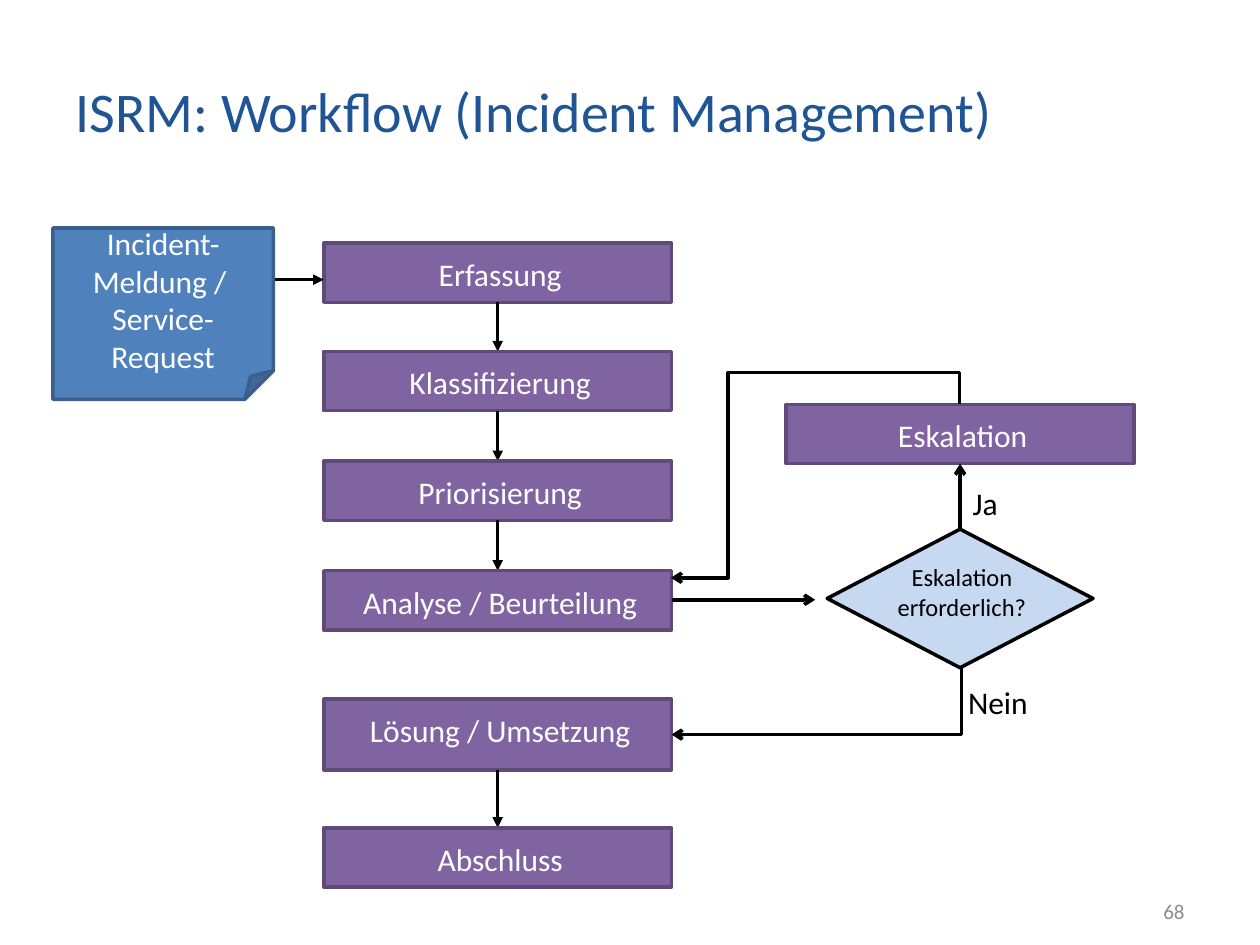
from lxml import etree
from pptx import Presentation
from pptx.dml.color import RGBColor
from pptx.enum.shapes import MSO_CONNECTOR, MSO_SHAPE
from pptx.enum.text import MSO_ANCHOR, PP_ALIGN
from pptx.oxml.ns import qn
from pptx.util import Inches, Pt

STRAIGHT, ELBOW = MSO_CONNECTOR.STRAIGHT, MSO_CONNECTOR.ELBOW
RECTANGLE, DIAMOND = MSO_SHAPE.RECTANGLE, MSO_SHAPE.DIAMOND
FOLDED_CORNER = MSO_SHAPE.FOLDED_CORNER
TOP, MIDDLE = MSO_ANCHOR.TOP, MSO_ANCHOR.MIDDLE
LEFT, CENTER, RIGHT = PP_ALIGN.LEFT, PP_ALIGN.CENTER, PP_ALIGN.RIGHT

WHITE = RGBColor(0xFF, 0xFF, 0xFF)
BLACK = RGBColor(0x00, 0x00, 0x00)
TITLE_BLUE = RGBColor(0x20, 0x55, 0x95)
NOTE_BLUE = RGBColor(0x4F, 0x81, 0xBD)
NOTE_EDGE = RGBColor(0x3A, 0x5F, 0x8C)
PURPLE = RGBColor(0x80, 0x64, 0xA2)
PURPLE_EDGE = RGBColor(0x5F, 0x4A, 0x78)
PALE_BLUE = RGBColor(0xC6, 0xD9, 0xF1)
GREY = RGBColor(0x8C, 0x8C, 0x8C)

FONT = "Calibri"
COLUMNS, ROWS = 100, 75  # square grid over the slide
CELL = Inches(10) // COLUMNS

# Main flow, in grid units
STEP_LEFT, STEP_WIDTH, STEP_HEIGHT = 25.7, 27.6, 4.7
STEP_RIGHT = STEP_LEFT + STEP_WIDTH
STEP_MIDDLE = STEP_LEFT + STEP_WIDTH / 2
STEPS = [  # label, top, height, arrow to the next step
    ("Erfassung", 19.3, STEP_HEIGHT, True),
    ("Klassifizierung", 27.9, STEP_HEIGHT, True),
    ("Priorisierung", 36.6, STEP_HEIGHT, True),
    ("Analyse / Beurteilung", 45.3, STEP_HEIGHT, False),
    ("Lösung / Umsetzung", 55.5, 5.6, True),
    ("Abschluss", 65.7, STEP_HEIGHT, False),
]

# Escalation branch
ESCALATION_LEFT, ESCALATION_TOP = 62.4, 32.1
BRANCH_MIDDLE = ESCALATION_LEFT + STEP_WIDTH / 2
DECISION_TOP, DECISION_WIDTH, DECISION_HEIGHT = 42, 21.1, 11


def grid(*units):
    return [round(unit * CELL) for unit in units]


def write(shape, text, size, color, align=CENTER, anchor=MIDDLE,
          insets=(0, 0, 0, 0), wrap=True):
    """Set the text; insets are left, top, right, bottom in grid units."""
    frame = shape.text_frame
    frame.text = text
    frame.word_wrap = wrap
    frame.vertical_anchor = anchor
    (frame.margin_left, frame.margin_top,
     frame.margin_right, frame.margin_bottom) = grid(*insets)
    for paragraph in frame.paragraphs:
        paragraph.alignment = align
        for run in paragraph.runs:
            run.font.name = FONT
            run.font.size = Pt(size)
            run.font.color.rgb = color


def add_label(slide, box, text, size, color, **options):
    write(slide.shapes.add_textbox(*grid(*box)), text, size, color, **options)


def add_node(slide, kind, box, fill, edge):
    shape = slide.shapes.add_shape(kind, *grid(*box))
    shape.shadow.inherit = False
    shape.fill.solid()
    shape.fill.fore_color.rgb = fill
    shape.line.color.rgb = edge
    shape.line.width = Pt(2)
    return shape


def add_step(slide, text, left, top, height=STEP_HEIGHT):
    box = (left, top, STEP_WIDTH, height)
    shape = add_node(slide, RECTANGLE, box, PURPLE, PURPLE_EDGE)
    write(shape, text, 18, WHITE, anchor=TOP, insets=(0.4, 0.95, 0, 0))


def add_arrow(slide, start, end, head="triangle", kind=STRAIGHT):
    connector = slide.shapes.add_connector(kind, *grid(*start, *end))
    connector.line.color.rgb = BLACK
    connector.line.width = Pt(2)
    properties = connector._element.spPr
    etree.SubElement(properties.find(qn("a:ln")), qn("a:tailEnd"), type=head)
    etree.SubElement(properties, qn("a:effectLst"))
    return connector


def bend(connector, preset, adjustments, quarter_turns=0):
    """Choose the elbow preset, its bends (1/1000 %) and its rotation."""
    properties = connector._element.spPr
    properties.find(qn("a:xfrm")).set("rot", str(quarter_turns * 5400000))
    geometry = properties.find(qn("a:prstGeom"))
    geometry.set("prst", preset)
    guides = geometry.find(qn("a:avLst"))
    if guides is None:
        guides = etree.SubElement(geometry, qn("a:avLst"))
    for number, value in enumerate(adjustments, 1):
        etree.SubElement(guides, qn("a:gd"), name=f"adj{number}",
                         fmla=f"val {value}")


def add_main_flow(slide):
    for index, (text, top, height, has_arrow) in enumerate(STEPS):
        add_step(slide, text, STEP_LEFT, top, height)
        if has_arrow:
            next_top = STEPS[index + 1][1]
            add_arrow(slide, (STEP_MIDDLE, top + height),
                      (STEP_MIDDLE, next_top))

    # Incoming report
    note = add_node(slide, FOLDED_CORNER, (4.2, 18.1, 17.5, 13.6),
                    NOTE_BLUE, NOTE_EDGE)
    write(note, "Incident-Meldung / \vService-Request", 18, WHITE,
          insets=(1, 0.5, 1, 0.5))
    add_arrow(slide, (21.8, 22.2), (STEP_LEFT, 22.2))


def add_escalation(slide):
    add_step(slide, "Eskalation", ESCALATION_LEFT, ESCALATION_TOP)

    # Decision
    decision_left = BRANCH_MIDDLE - DECISION_WIDTH / 2
    decision = add_node(
        slide, DIAMOND,
        (decision_left, DECISION_TOP, DECISION_WIDTH, DECISION_HEIGHT),
        PALE_BLUE, BLACK)
    write(decision, "Eskalation\nerforderlich?", 14, BLACK,
          insets=(0.3, 0, 0, 1.1), wrap=False)
    add_label(slide, (77.2, 38.4, 2, 3), "Ja", 18, BLACK,
              anchor=TOP, wrap=False)
    add_label(slide, (76.8, 54.2, 4.8, 3), "Nein", 18, BLACK,
              anchor=TOP, wrap=False)

    # Straight arrows to and from the decision
    add_arrow(slide, (STEP_RIGHT, 47.6), (64.7, 47.6), "arrow")
    add_arrow(slide, (BRANCH_MIDDLE, DECISION_TOP),
              (BRANCH_MIDDLE, ESCALATION_TOP + STEP_HEIGHT), "arrow")

    # "Nein" leads down and left to the solution
    no_arrow = add_arrow(slide, (BRANCH_MIDDLE, 53.1), (STEP_RIGHT, 58.3),
                         "arrow", ELBOW)
    bend(no_arrow, "bentConnector3", [-500])

    # Escalation loops back to the analysis; ends are given before rotation
    loop = add_arrow(slide, (71.6, 50.4), (57.8, 27.5), "arrow", ELBOW)
    bend(loop, "bentConnector4", [-18100, 80200], quarter_turns=3)


def main():
    presentation = Presentation()
    presentation.slide_width = COLUMNS * CELL
    presentation.slide_height = ROWS * CELL
    slide = presentation.slides.add_slide(presentation.slide_layouts[6])

    add_label(slide, (5, 3, 77.2, 11.5), "ISRM: Workflow (Incident Management)",
              32, TITLE_BLUE, align=LEFT, insets=(1, 0.5, 1, 0.5))
    add_main_flow(slide)
    add_escalation(slide)
    add_label(slide, (71.7, 70.3, 23.3, 4), "68", 12, GREY,
              align=RIGHT, insets=(1, 0.5, 1, 0.5))

    presentation.save("out.pptx")


if __name__ == "__main__":
    main()
